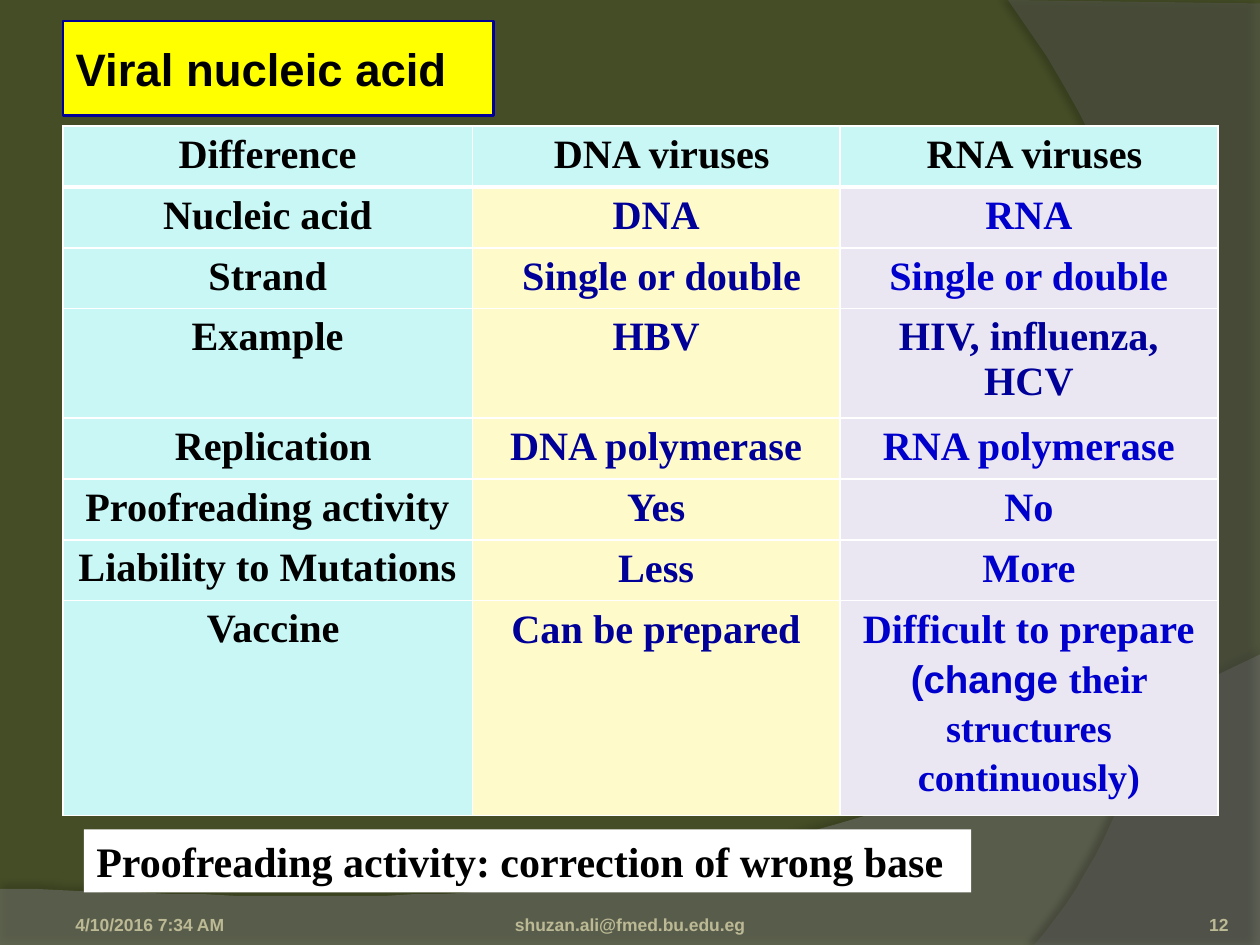
"""Build the slide comparing the nucleic acids of DNA and RNA viruses."""
from dataclasses import dataclass

import lxml.etree
import pptx
import pptx.dml.color
import pptx.enum.shapes
import pptx.enum.text
import pptx.oxml.ns
import pptx.util

Pt = pptx.util.Pt
qn = pptx.oxml.ns.qn
ALIGN = pptx.enum.text.PP_ALIGN
ANCHOR = pptx.enum.text.MSO_ANCHOR
SERIF, SANS = "Times New Roman", "Arial"
Point = tuple[float, float]


@dataclass(frozen=True)
class Wave:
    start: Point
    control_1: Point
    control_2: Point
    end: Point
    corners: tuple[Point, ...]
    color: str
    opacity: int
    shadow_opacity: int
    shadow_distance: float
    shadow_angle: int


@dataclass(frozen=True)
class Footer:
    text: str
    left: float
    width: float
    margin: float
    align: ALIGN


@dataclass(frozen=True)
class Column:
    width: float
    fill: str
    color: str


WAVES = (
    Wave((720, 374.4), (402.5, 524.9), (281.5, 517.7), (0, 507.6),
         ((0, 540), (720, 540)), "7F7F7F", 45, 35, 3.5, 270),
    Wave((591, 540), (673, 445.7), (733, 216), (576, 0),
         ((720, 1.5), (720, 540)), "5E5E5E", 40, 45, 4, 180),
)
FOOTERS = (
    Footer("4/10/2016 7:34 AM", 36, 168, 7.2, ALIGN.LEFT),
    Footer("shuzan.ali@fmed.bu.edu.eg", 246, 228, 0, ALIGN.CENTER),
    Footer("12", 642, 60, 0, ALIGN.RIGHT),
)
COLUMNS = (
    Column(234, "C9F7F6", "000000"),
    Column(210, "FEFAC9", "000099"),
    Column(216, "EBE7F2", "0000CC"),
)
COMPARISON = (
    ("Difference", "DNA viruses ", "RNA viruses "),
    ("Nucleic acid", "DNA", "RNA"),
    ("Strand", "Single or double ", "Single or double"),
    ("Example", "HBV", "HIV, influenza, HCV"),
    (" Replication  ", "DNA polymerase", "RNA polymerase"),
    ("Proofreading activity", "Yes", "No"),
    ("Liability to Mutations ", "Less", "More"),
    ("Vaccine ", "Can be prepared", "Difficult to prepare "),
)
VACCINE_REASON = (("(change ", SANS), ("their structures continuously)", SERIF))
ROW_HEIGHT = 33.75
TALL_ROWS = {3: 58.5, 7: 113.5}
SPACED_ROWS = (6, 7)


def rgb(color: str) -> pptx.dml.color.RGBColor:
    return pptx.dml.color.RGBColor.from_string(color)


def paint(target, color: str) -> None:
    target.fill.solid()
    target.fill.fore_color.rgb = rgb(color)


def format_run(run, size: float, font: str, color: str) -> None:
    run.font.size = Pt(size)
    run.font.name = font
    run.font.bold = True
    run.font.color.rgb = rgb(color)


def write(frame, text: str, size: float, font: str, color: str, align: ALIGN):
    frame.text = text
    paragraph = frame.paragraphs[0]
    paragraph.alignment = align
    format_run(paragraph.runs[0], size, font, color)
    return paragraph


def set_margins(target, left: float, top: float, right: float, bottom: float) -> None:
    target.margin_left, target.margin_top = Pt(left), Pt(top)
    target.margin_right, target.margin_bottom = Pt(right), Pt(bottom)


def set_opacity(color_element, percent: int) -> None:
    lxml.etree.SubElement(color_element, qn("a:alpha"), val=str(percent * 1000))


def curve(wave: Wave, steps: int = 40) -> list[Point]:
    anchors = (wave.start, wave.control_1, wave.control_2, wave.end)
    points = []
    for step in range(1, steps + 1):
        t = step / steps
        weights = ((1 - t) ** 3, 3 * t * (1 - t) ** 2, 3 * t * t * (1 - t), t ** 3)
        points.append(tuple(sum(w * p[axis] for w, p in zip(weights, anchors))
                            for axis in (0, 1)))
    return points


def draw_wave(slide, wave: Wave) -> None:
    builder = slide.shapes.build_freeform(*wave.start, scale=float(Pt(1)))
    builder.add_line_segments(curve(wave) + list(wave.corners), close=True)
    shape = builder.convert_to_shape()
    paint(shape, wave.color)
    shape.line.fill.background()
    properties = shape._element.spPr
    set_opacity(properties.find(qn("a:solidFill"))[0], wave.opacity)
    shape.shadow.inherit = False
    shadow = lxml.etree.SubElement(
        properties.find(qn("a:effectLst")), qn("a:outerShdw"),
        blurRad=str(Pt(4)), dist=str(Pt(wave.shadow_distance)),
        dir=str(wave.shadow_angle * 60000), rotWithShape="0")
    shade = lxml.etree.SubElement(shadow, qn("a:srgbClr"), val="000000")
    set_opacity(shade, wave.shadow_opacity)


def draw_footer(slide, footer: Footer) -> None:
    box = slide.shapes.add_textbox(Pt(footer.left), Pt(505.5), Pt(footer.width), Pt(28.8))
    frame = box.text_frame
    frame.word_wrap = True
    frame.vertical_anchor = ANCHOR.BOTTOM
    set_margins(frame, footer.margin, 3.6, footer.margin, 0)
    write(frame, footer.text, 10, SANS, "BCB995", footer.align)


def draw_title(slide) -> None:
    title = slide.shapes.title
    title.left, title.top, title.width, title.height = Pt(36), Pt(12), Pt(246), Pt(54)
    bevel = lxml.etree.SubElement(title._element.spPr, qn("a:prstGeom"), prst="bevel")
    lxml.etree.SubElement(bevel, qn("a:avLst"))
    paint(title, "FFFF00")
    title.line.color.rgb = rgb("000099")
    title.line.width = Pt(1.5)
    frame = title.text_frame
    frame.auto_size = pptx.enum.text.MSO_AUTO_SIZE.NONE
    frame.vertical_anchor = ANCHOR.MIDDLE
    write(frame, "Viral nucleic acid", 26, SANS, "000000", ALIGN.LEFT)


def draw_borders(cell, row: int) -> None:
    widths = {"L": 1, "R": 1, "T": 3 if row == 1 else 1, "B": 3 if row == 0 else 1}
    properties = cell._tc.get_or_add_tcPr()
    for index, (side, width) in enumerate(widths.items()):
        border = lxml.etree.Element(qn(f"a:ln{side}"), w=str(Pt(width)))
        fill = lxml.etree.SubElement(border, qn("a:solidFill"))
        lxml.etree.SubElement(fill, qn("a:srgbClr"), val="FFFFFF")
        properties.insert(index, border)


def fill_cell(cell, row: int, column: int, text: str) -> None:
    style = COLUMNS[column]
    header = row == 0
    paint(cell, COLUMNS[0].fill if header else style.fill)
    color = "000000" if header else "000099" if text.startswith("HIV") else style.color
    paragraph = write(cell.text_frame, text, 23, SERIF, color, ALIGN.CENTER)
    if row in SPACED_ROWS and column > 0:
        set_margins(cell, 5, 0, 5, 0)
        paragraph.line_spacing = 1.15
        paragraph.space_after = Pt(10)
    if text.startswith("Difficult"):
        for reason, font in VACCINE_REASON:
            run = paragraph.add_run()
            run.text = reason
            format_run(run, 22, font, color)
    elif text.endswith(" "):
        paragraph._p.get_or_add_pPr().set("rtl", "1")
    draw_borders(cell, row)


def draw_comparison(slide) -> None:
    table = slide.shapes.add_table(len(COMPARISON), len(COLUMNS), Pt(36), Pt(72),
                                   Pt(660), Pt(374.5)).table
    table.horz_banding = False
    for column, style in enumerate(COLUMNS):
        table.columns[column].width = Pt(style.width)
    for row, texts in enumerate(COMPARISON):
        table.rows[row].height = Pt(TALL_ROWS.get(row, ROW_HEIGHT))
        for column, text in enumerate(texts):
            fill_cell(table.cell(row, column), row, column, text)


def draw_definition(slide) -> None:
    note = slide.shapes.add_shape(pptx.enum.shapes.MSO_SHAPE.RECTANGLE,
                                  Pt(48), Pt(474), Pt(507), Pt(36))
    note.shadow.inherit = False
    paint(note, "FFFFFF")
    note.line.fill.background()
    note.text_frame.word_wrap = True
    note.text_frame.vertical_anchor = ANCHOR.TOP
    write(note.text_frame, "Proofreading activity: correction of wrong base",
          24, SERIF, "000000", ALIGN.LEFT)


def main() -> None:
    deck = pptx.Presentation()
    deck.slide_width, deck.slide_height = Pt(720), Pt(540)
    slide = deck.slides.add_slide(deck.slide_layouts[5])
    paint(slide.background, "444D26")
    for wave in WAVES:
        draw_wave(slide, wave)
    for footer in FOOTERS:
        draw_footer(slide, footer)
    draw_comparison(slide)
    draw_title(slide)
    draw_definition(slide)
    deck.save("out.pptx")


if __name__ == "__main__":
    main()
